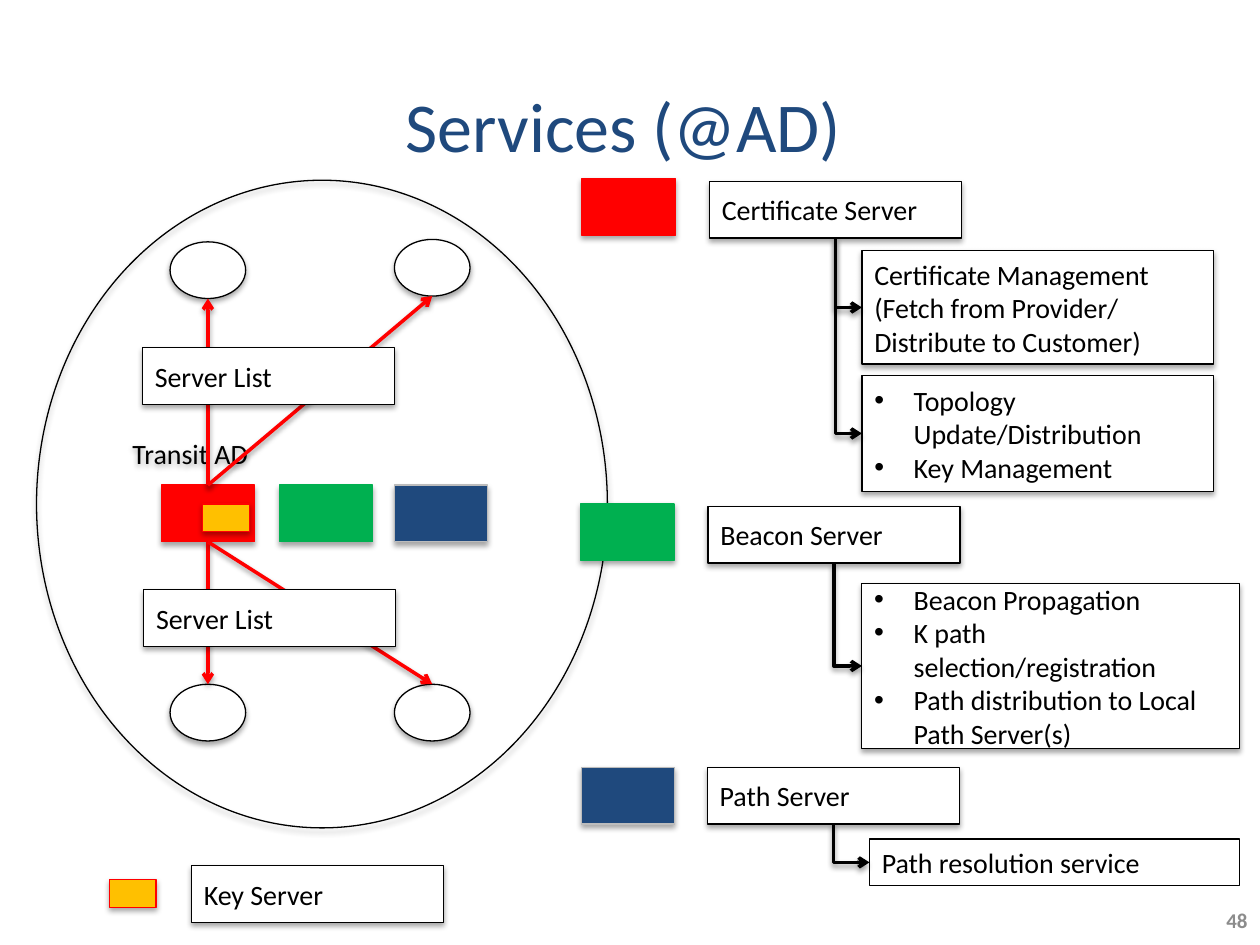
from dataclasses import dataclass

from lxml.etree import SubElement
from pptx import Presentation
from pptx.dml.color import RGBColor as Rgb
from pptx.enum.shapes import MSO_CONNECTOR as Link, MSO_SHAPE as Form
from pptx.enum.text import MSO_ANCHOR as Anchor, PP_ALIGN as Align
from pptx.oxml.ns import qn
from pptx.util import Pt


@dataclass(frozen=True)
class Theme:
    font: str = "Calibri"
    title_size: float = 40
    body_size: float = 16
    number_size: float = 12
    thin: float = 0.75
    thick: float = 2
    black: str = "000000"
    white: str = "FFFFFF"
    red: str = "FF0000"
    green: str = "00B050"
    navy: str = "1F497D"
    amber: str = "FFC000"
    silver: str = "BCBCBC"
    gray: str = "8C8C8C"


@dataclass(frozen=True)
class Box:
    left: float
    top: float
    width: float
    height: float

    @property
    def lengths(self):
        return Pt(self.left), Pt(self.top), Pt(self.width), Pt(self.height)


@dataclass(frozen=True)
class Detail:
    box: Box
    lines: tuple
    bullets: bool = False
    shadow: bool = True
    anchor: Anchor = Anchor.MIDDLE


@dataclass(frozen=True)
class Service:
    name: str
    fill: str
    edge: str
    swatch: tuple
    label: tuple
    details: tuple


THEME = Theme()
SWATCH = (53.3, 32.4)
LABEL = (144, 32.4)
NODE = (43.2, 32.4)
KEY = (26.6, 15.8)
BULLET_INDENT = 22.5

SERVICES = (
    Service("Certificate Server", THEME.red, THEME.red, (332.6, 102.2), (405.4, 103.7), (
        Detail(Box(492.5, 143.3, 200.9, 64.8),
               ("Certificate Management", "(Fetch from Provider/ Distribute to Customer)")),
        Detail(Box(492.5, 214.6, 200.9, 66.2),
               ("Topology Update/Distribution", "Key Management"), bullets=True),
    )),
    Service("Beacon Server", THEME.green, THEME.green, (331.9, 288), (404.6, 289.4), (
        Detail(Box(492.5, 333.4, 216, 94.3),
               ("Beacon Propagation", "K path selection/registration",
                "Path distribution to Local Path Server(s)"), bullets=True),
    )),
    Service("Path Server", THEME.navy, THEME.silver, (332.3, 438.5), (404.2, 438.5), (
        Detail(Box(496.8, 479.5, 211.7, 26.6), ("Path resolution service",),
               shadow=False, anchor=Anchor.TOP),
    )),
)


def add_shadow(effects, opacity: int) -> None:
    """Put a soft downward shadow into an empty a:effectLst."""
    outer = SubElement(effects, qn("a:outerShdw"), blurRad="40000", dist="23000",
                       dir="5400000", rotWithShape="0")
    color = SubElement(outer, qn("a:srgbClr"), val=THEME.black)
    SubElement(color, qn("a:alpha"), val=str(opacity * 1000))


def write(shape, *lines: str, size: float = THEME.body_size, color: str = THEME.black,
          bold: bool = False, align: Align = Align.LEFT, anchor: Anchor = Anchor.MIDDLE,
          wrap: bool = True, bullets: bool = False) -> None:
    frame = shape.text_frame
    frame.word_wrap = wrap
    frame.vertical_anchor = anchor
    for index, line in enumerate(lines):
        para = frame.add_paragraph() if index else frame.paragraphs[0]
        para.alignment = align
        span = para.add_run()
        span.text = line
        span.font.name, span.font.size, span.font.bold = THEME.font, Pt(size), bold
        span.font.color.rgb = Rgb.from_string(color)
        if bullets:
            props = para._p.get_or_add_pPr()
            props.set("marL", str(Pt(BULLET_INDENT)))
            props.set("indent", str(-Pt(BULLET_INDENT)))
            SubElement(props, qn("a:buFont"), typeface="Arial")
            SubElement(props, qn("a:buChar"), char="•")


def draw_shape(page, box: Box, fill: str | None = THEME.white, edge: str = THEME.black,
               form: Form = Form.RECTANGLE, shadow: bool = True):
    shape = page.shapes.add_shape(form, *box.lengths)
    if fill:
        shape.fill.solid()
        shape.fill.fore_color.rgb = Rgb.from_string(fill)
    else:
        shape.fill.background()
    shape.line.color.rgb = Rgb.from_string(edge)
    shape.line.width = Pt(THEME.thin)
    shape.shadow.inherit = False
    if shadow:
        add_shadow(shape._element.spPr.find(qn("a:effectLst")), 35)
    return shape


def draw_label(page, corner: tuple, text: str) -> Box:
    box = Box(*corner, *LABEL)
    write(draw_shape(page, box), text)
    return box


def draw_arrow(page, start: tuple, end: tuple, color: str, kind: Link = Link.STRAIGHT):
    arrow = page.shapes.add_connector(kind, *(Pt(value) for value in start + end))
    arrow.line.color.rgb = Rgb.from_string(color)
    arrow.line.width = Pt(THEME.thick)
    SubElement(arrow.line._get_or_add_ln(), qn("a:tailEnd"), type="arrow")
    add_shadow(SubElement(arrow._element.spPr, qn("a:effectLst")), 38)
    return arrow


def draw_elbow(page, source: Box, target: Box) -> None:
    """Go down from the source's bottom centre, then right to the target's left side.

    The one-bend preset is mirrored and turned 270 degrees about its centre,
    so its width is the drop and its height is the run.
    """
    x, y = source.left + source.width / 2, source.top + source.height
    run, drop = target.left - x, target.top + target.height / 2 - y
    left, top = x + (run - drop) / 2, y + (drop - run) / 2
    elbow = draw_arrow(page, (left + drop, top), (left, top + run), THEME.black, Link.ELBOW)
    props = elbow._element.spPr
    props.find(qn("a:xfrm")).set("rot", str(270 * 60000))
    props.find(qn("a:prstGeom")).set("prst", "bentConnector2")


def draw_title(page) -> None:
    title = page.shapes.title
    title.left, title.top, title.width, title.height = Box(224.6, 43.2, 271.4, 55.4).lengths
    write(title, "Services (@AD)", size=THEME.title_size, color=THEME.navy, wrap=False)


def draw_domain(page) -> None:
    """Draw the transit domain with its servers, nodes and server lists."""
    for left, service in zip((92.2, 159.8, 225.4), SERVICES):
        draw_shape(page, Box(left, 277.2, *SWATCH), service.fill, service.edge)
    domain = draw_shape(page, Box(20.9, 103, 326.2, 370.1), None, form=Form.OVAL)
    write(domain, "Transit AD")
    domain.text_frame.margin_bottom = Pt(62)

    for corner in ((97.2, 138.2), (225.4, 136.8), (97.2, 391), (225.4, 391)):
        draw_shape(page, Box(*corner, *NODE), form=Form.OVAL)
    for start_y, ends in ((277.2, ((118.8, 170.6), (247, 169.2))),
                          (309.6, ((118.8, 391), (247, 391)))):
        for end in ends:
            draw_arrow(page, (118.8, start_y), end, THEME.red)
    for corner in ((82.1, 337), (81.4, 198.7)):
        draw_label(page, corner, "Server List")


def draw_service(page, service: Service) -> None:
    draw_shape(page, Box(*service.swatch, *SWATCH), service.fill, service.edge)
    label = draw_label(page, service.label, service.name)
    for detail in service.details:
        panel = draw_shape(page, detail.box, shadow=detail.shadow)
        write(panel, *detail.lines, bullets=detail.bullets, anchor=detail.anchor)
        draw_elbow(page, label, detail.box)


def main() -> None:
    deck = Presentation()
    deck.slide_width, deck.slide_height = Pt(720), Pt(540)
    page = deck.slides.add_slide(deck.slide_layouts[5])
    draw_title(page)
    draw_domain(page)
    for service in SERVICES:
        draw_service(page, service)
    for corner in ((115.9, 288), (62.6, 502.6)):
        draw_shape(page, Box(*corner, *KEY), THEME.amber, THEME.red)
    draw_label(page, (109.4, 494.6), "Key Server")
    number = page.shapes.add_textbox(*Box(670.3, 511.2, 49.7, 28.8).lengths)
    write(number, "48", size=THEME.number_size, color=THEME.gray, bold=True, align=Align.RIGHT)
    deck.save("out.pptx")


if __name__ == "__main__":
    main()
